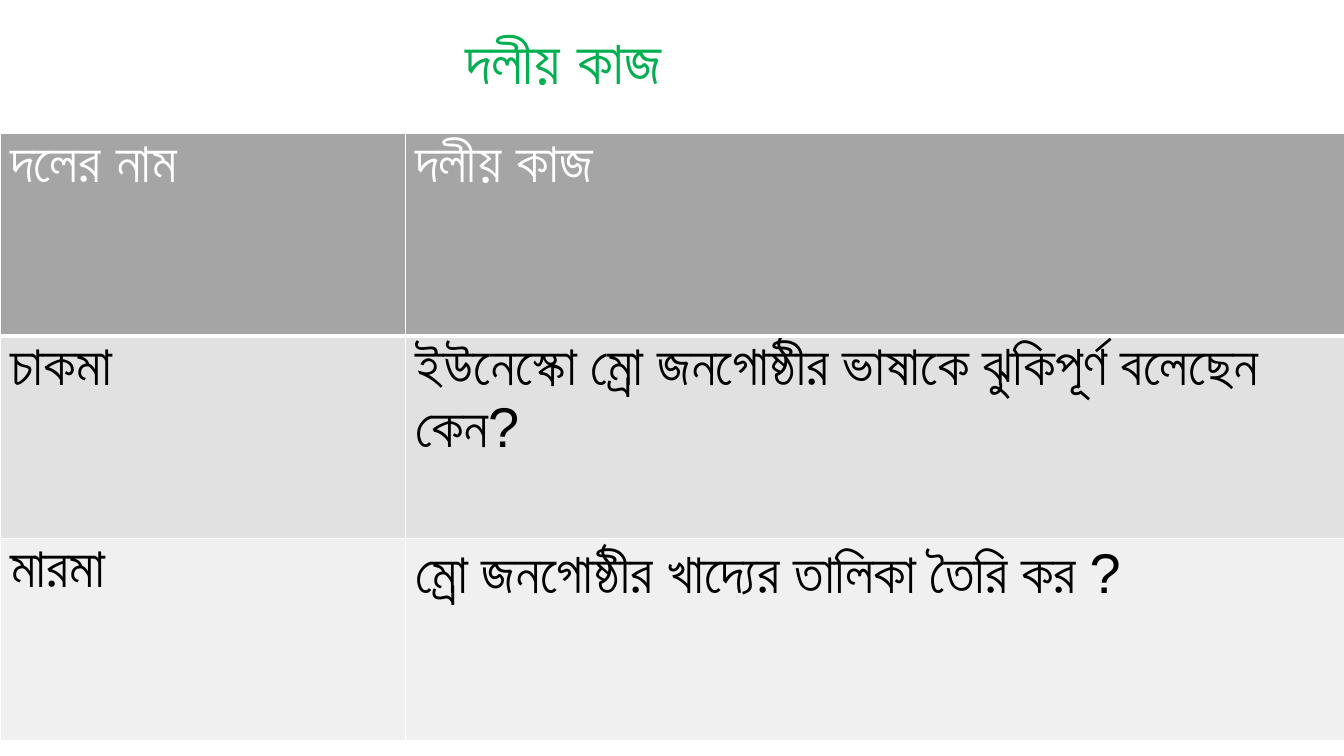
from lxml.etree import SubElement
from pptx import Presentation
from pptx.dml.color import RGBColor
from pptx.oxml.ns import qn
from pptx.util import Inches, Pt

WHITE = RGBColor(0xFF, 0xFF, 0xFF)
BLACK = RGBColor(0x00, 0x00, 0x00)
GREEN = RGBColor(0x00, 0xB0, 0x50)
HEADER_GRAY = RGBColor(0xA5, 0xA5, 0xA5)
BAND_GRAYS = (RGBColor(0xE1, 0xE1, 0xE1), RGBColor(0xF0, 0xF0, 0xF0))

FONT = "Arial"
COLUMN_WIDTHS = (4.02, 9.32)
ROW_HEIGHT = 2.01
GROUP_TASKS = (
    ("দলের নাম", "দলীয় কাজ"),
    ("চাকমা", "ইউনেস্কো ম্রো জনগোষ্ঠীর ভাষাকে ঝুকিপূর্ণ বলেছেন কেন?"),
    ("মারমা", "ম্রো জনগোষ্ঠীর খাদ্যের তালিকা তৈরি কর ?"),
)


def add_text(frame, text, size, color, bold):
    span = frame.paragraphs[0].add_run()
    span.text = text
    span.font.name = FONT
    span.font.size = Pt(size)
    span.font.bold = bold
    span.font.color.rgb = color


def add_borders(cell, bottom_width):
    """Draw white cell borders; they must come before the fill in the XML."""
    properties = cell._tc.get_or_add_tcPr()
    widths = {"a:lnL": 1, "a:lnR": 1, "a:lnT": 1, "a:lnB": bottom_width}
    for tag, width in widths.items():
        line = SubElement(properties, qn(tag), w=str(Pt(width)))
        fill = SubElement(line, qn("a:solidFill"))
        SubElement(fill, qn("a:srgbClr"), val=str(WHITE))


def add_title(page, text):
    box = page.shapes.add_textbox(Inches(4.52), Inches(0.18), Inches(5.85), Inches(0.84))
    box.text_frame.word_wrap = True
    add_text(box.text_frame, text, 44, GREEN, True)


def add_task_table(page, rows):
    table = page.shapes.add_table(
        len(rows), len(COLUMN_WIDTHS), Inches(0), Inches(1.32),
        Inches(sum(COLUMN_WIDTHS)), Inches(ROW_HEIGHT * len(rows)),
    ).table
    for column, width in zip(table.columns, COLUMN_WIDTHS):
        column.width = Inches(width)
    for index, texts in enumerate(rows):
        table.rows[index].height = Inches(ROW_HEIGHT)
        is_header = index == 0
        for cell, text in zip(table.rows[index].cells, texts):
            # The line under the header is thicker, on both sides of the edge
            add_borders(cell, 3 if is_header else 1)
            cell.fill.solid()
            cell.fill.fore_color.rgb = HEADER_GRAY if is_header else BAND_GRAYS[(index - 1) % 2]
            add_text(cell.text_frame, text, 40, WHITE if is_header else BLACK, is_header)


def main():
    deck = Presentation()
    deck.slide_width, deck.slide_height = Inches(13.33), Inches(7.5)
    page = deck.slides.add_slide(deck.slide_layouts[6])

    # Table of groups and their tasks
    add_task_table(page, GROUP_TASKS)

    # Heading above the table
    add_title(page, GROUP_TASKS[0][1])

    deck.save("out.pptx")


if __name__ == "__main__":
    main()
